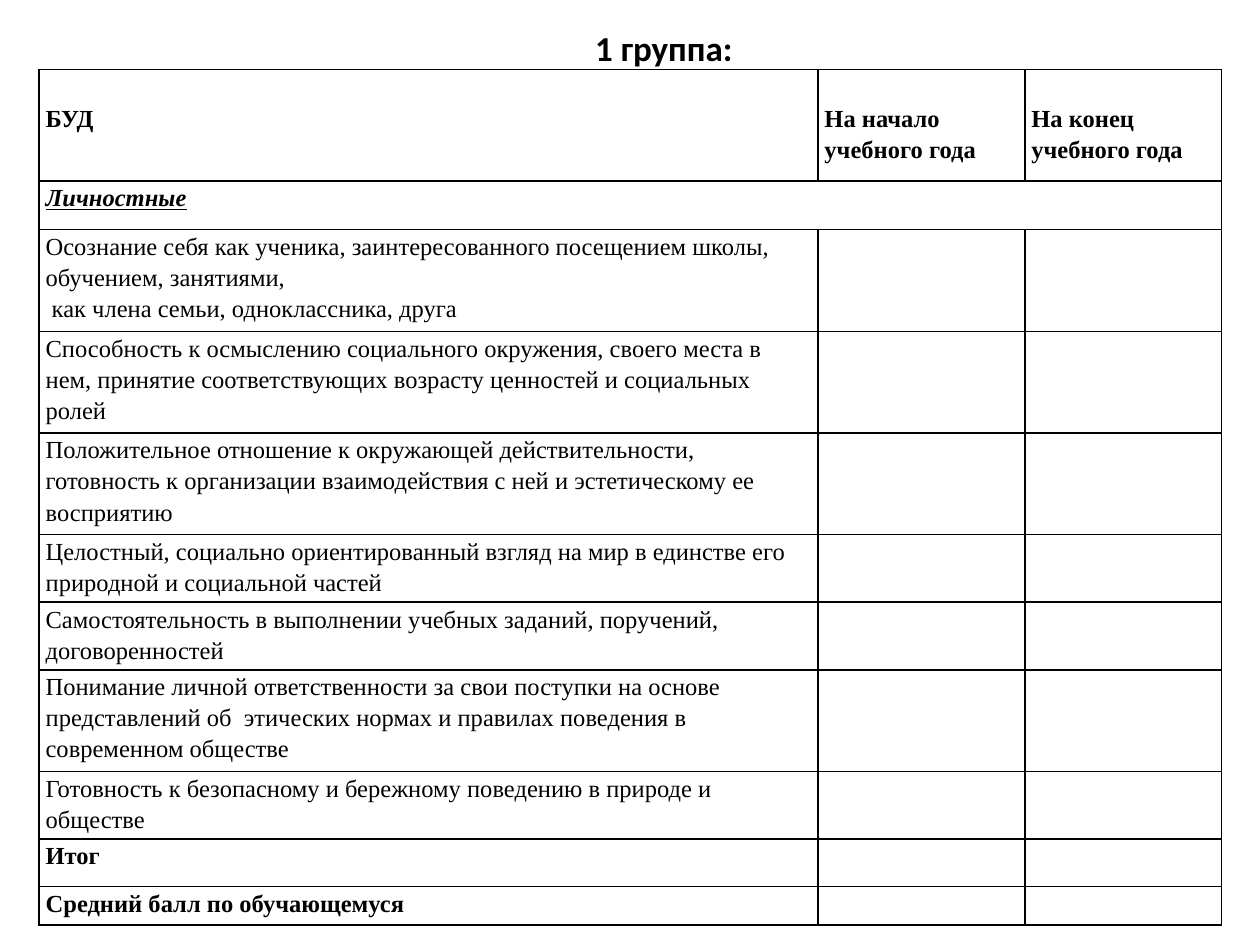
from lxml import etree
from pptx import Presentation
from pptx import util as u
from pptx.dml.color import RGBColor
from pptx.enum import text as t
from pptx.oxml import ns

BLACK = "000000"
WHITE = "FFFFFF"
COLUMN_WIDTHS = [15.7, 4.17, 3.96]
HEADER_HEIGHT = 2.25
HEADER_TOP_MARGIN = 0.65
HEADERS = ["БУД", "На начало учебного года", "На конец учебного года"]
SECTION = "Личностные"
SECTION_HEIGHT = 0.98
TWO_LINES, THREE_LINES = 1.36, 2.05
SKILLS = [
    ("Осознание себя как ученика, заинтересованного посещением школы, обучением, занятиями,\n"
     " как члена семьи, одноклассника, друга", THREE_LINES),
    ("Способность к осмыслению социального окружения, своего места в нем, принятие "
     "соответствующих возрасту ценностей и социальных ролей", THREE_LINES),
    ("Положительное отношение к окружающей действительности, готовность к организации "
     "взаимодействия с ней и эстетическому ее восприятию", THREE_LINES),
    ("Целостный, социально ориентированный взгляд на мир в единстве его природной "
     "и социальной частей", TWO_LINES),
    ("Самостоятельность в выполнении учебных заданий, поручений, договоренностей", TWO_LINES),
    ("Понимание личной ответственности за свои поступки на основе представлений "
     "об  этических нормах и правилах поведения в современном обществе", THREE_LINES),
    ("Готовность к безопасному и бережному поведению в природе и обществе", TWO_LINES),
]
TOTALS = [("Итог", 0.96), ("Средний балл по обучающемуся", 0.77)]


def color(value):
    return RGBColor.from_string(value)


def write(frame, content, font="Times New Roman", size=14, bold=False, italic=False,
          underline=False, align=t.PP_ALIGN.LEFT, spacing=1.15):
    frame.word_wrap = True
    for index, line in enumerate(content.split("\n")):
        paragraph = frame.add_paragraph() if index else frame.paragraphs[0]
        paragraph.alignment = align
        paragraph.line_spacing = spacing
        run = paragraph.add_run()
        run.text = line
        run.font.name = font
        run.font.size = u.Pt(size)
        run.font.bold = bold
        run.font.italic = italic
        run.font.underline = underline
        run.font.color.rgb = color(BLACK)


def add_borders(cell):
    properties = cell._tc.get_or_add_tcPr()
    for side in ("a:lnL", "a:lnR", "a:lnT", "a:lnB"):
        line = etree.SubElement(properties, ns.qn(side), w=str(u.Pt(1)))
        fill = etree.SubElement(line, ns.qn("a:solidFill"))
        etree.SubElement(fill, ns.qn("a:srgbClr"), val=BLACK)


def fill_cell(cell, content, top=0, **style):
    cell.margin_left = cell.margin_right = u.Cm(0.13)
    cell.margin_top, cell.margin_bottom = u.Cm(top), 0
    add_borders(cell)
    cell.fill.solid()
    cell.fill.fore_color.rgb = color(WHITE)
    write(cell.text_frame, content, **style)


def add_title(slide, content):
    box = slide.shapes.add_textbox(u.Cm(3.96), u.Cm(0.41), u.Cm(18.85), u.Cm(1.11))
    write(box.text_frame, content, font="Calibri", size=20, bold=True,
          align=t.PP_ALIGN.CENTER, spacing=1.0)


def add_skills_table(slide):
    rows = [(HEADERS, HEADER_HEIGHT, {"bold": True, "top": HEADER_TOP_MARGIN}),
            ([SECTION, "", ""], SECTION_HEIGHT,
             {"bold": True, "italic": True, "underline": True})]
    rows += [([skill, "", ""], height, {}) for skill, height in SKILLS]
    rows += [([total, "", ""], height, {"bold": True}) for total, height in TOTALS]

    table = slide.shapes.add_table(
        len(rows), len(COLUMN_WIDTHS), u.Cm(0.79), u.Cm(1.4),
        u.Cm(sum(COLUMN_WIDTHS)), u.Cm(sum(height for _, height, _ in rows))).table
    table.first_row = table.horz_banding = False
    for column, width in zip(table.columns, COLUMN_WIDTHS):
        column.width = u.Cm(width)
    for row, (contents, height, style) in zip(table.rows, rows):
        row.height = u.Cm(height)
        for cell, content in zip(row.cells, contents):
            fill_cell(cell, content, **style)
    table.cell(1, 0).merge(table.cell(1, 2))


def main():
    presentation = Presentation()
    presentation.slide_width, presentation.slide_height = u.Cm(25.4), u.Cm(19.05)
    slide = presentation.slides.add_slide(presentation.slide_layouts[6])
    add_title(slide, "1 группа:")
    add_skills_table(slide)
    presentation.save("out.pptx")


if __name__ == "__main__":
    main()
